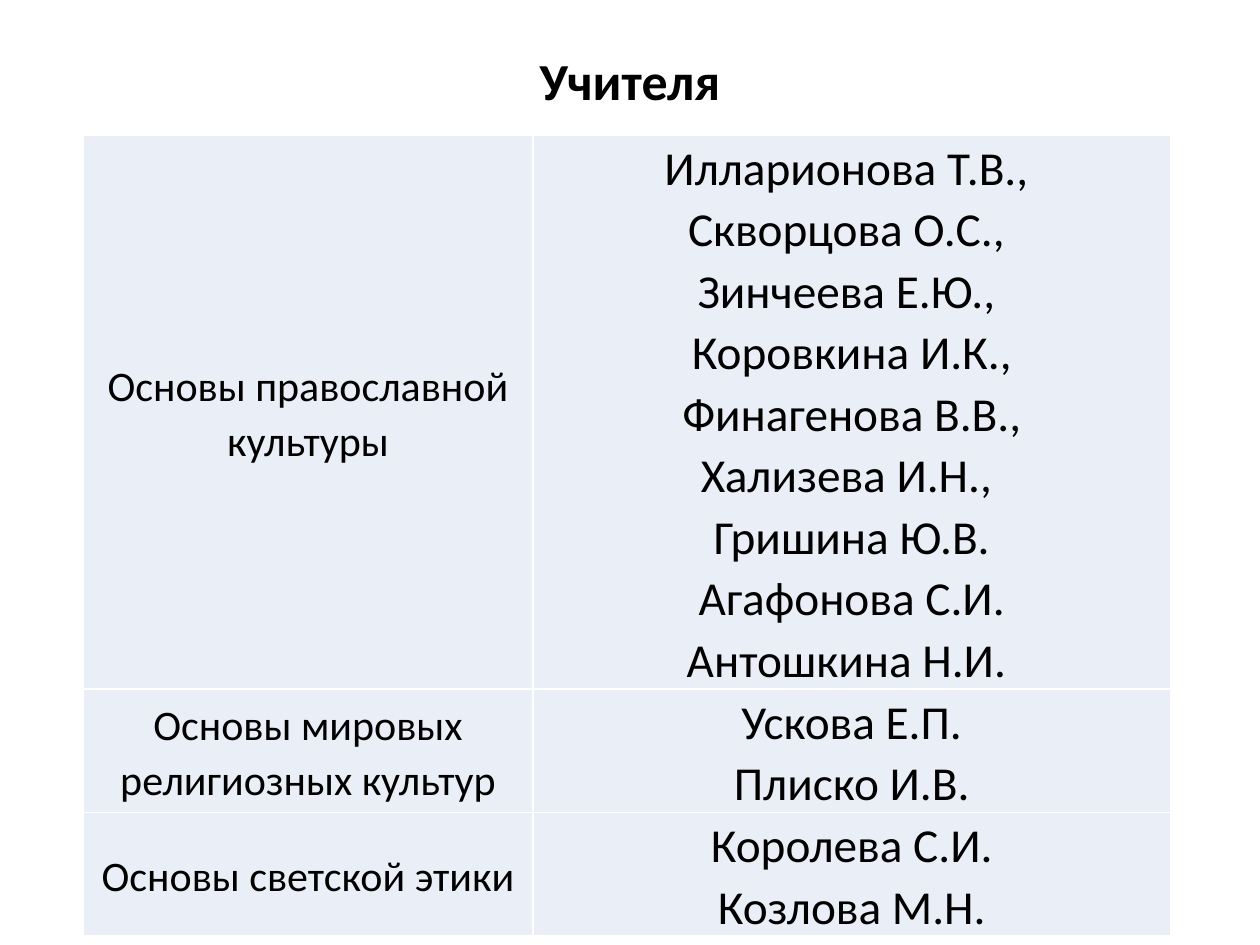
"""Build the slide listing the teachers of each course."""
from dataclasses import dataclass

from lxml.etree import SubElement
from pptx import Presentation
from pptx.dml.color import RGBColor
from pptx.enum.text import MSO_ANCHOR as Anchor, PP_ALIGN as Align
from pptx.oxml.ns import qn
from pptx.util import Inches, Pt


@dataclass(frozen=True)
class Theme:
    """Colours and type sizes of the slide."""
    font: str = "Calibri"
    ink: str = "000000"
    cell: str = "EAEFF7"
    border: str = "FFFFFF"
    border_width: int = Pt(1)
    title_size: float = 29.7
    course_size: float = 24
    teacher_size: float = 27


@dataclass(frozen=True)
class Course:
    """A course, its teachers and the height of its row in inches."""
    name: str
    teachers: tuple[str, ...]
    height: float


THEME = Theme()
COLUMN_WIDTHS = (3.57, 5.06)
COURSES = (
    Course("Основы православной культуры", (
        "Илларионова Т.В., ", "Скворцова О.С., ", "Зинчеева Е.Ю., ",
        "Коровкина И.К.,", " Финагенова В.В., ", "Хализева И.Н., ",
        "Гришина Ю.В.", "Агафонова С.И.", "Антошкина Н.И. "), 4.4),
    Course("Основы мировых религиозных культур",
           ("Ускова Е.П.", "Плиско И.В."), 0.98),
    Course("Основы светской этики",
           ("Королева С.И.", "Козлова М.Н."), 0.98),
)


def write(frame, text: str, size: float, spacing: float, bold: bool = False) -> None:
    """Fill a text frame with centred paragraphs, one per line of text."""
    frame.text = text
    frame.word_wrap = True
    for paragraph in frame.paragraphs:
        paragraph.alignment = Align.CENTER
        paragraph.line_spacing = spacing
        for run in paragraph.runs:
            run.font.name = THEME.font
            run.font.size = Pt(size)
            run.font.bold = bold
            run.font.color.rgb = RGBColor.from_string(THEME.ink)


def add_borders(cell) -> None:
    """Draw the four borders of a table cell."""
    properties = cell._tc.get_or_add_tcPr()
    for position, side in enumerate(("lnL", "lnR", "lnT", "lnB")):
        line = SubElement(properties, qn(f"a:{side}"), w=str(THEME.border_width))
        fill = SubElement(line, qn("a:solidFill"))
        SubElement(fill, qn("a:srgbClr"), val=THEME.border)
        properties.insert(position, line)


def style_cell(cell, text: str, size: float) -> None:
    """Write and format one table cell."""
    write(cell.text_frame, text, size, 1.07)
    cell.vertical_anchor = Anchor.MIDDLE
    cell.margin_left = cell.margin_right = cell.margin_top = Inches(0.01)
    cell.margin_bottom = 0
    cell.fill.solid()
    cell.fill.fore_color.rgb = RGBColor.from_string(THEME.cell)
    add_borders(cell)


def add_title(slide, text: str) -> None:
    """Add the slide heading."""
    frame = slide.shapes.add_textbox(
        Inches(0.69), Inches(0.4), Inches(8.62), Inches(0.52)).text_frame
    frame.vertical_anchor = Anchor.MIDDLE
    write(frame, text, THEME.title_size, 0.9, bold=True)


def add_courses(slide, courses: tuple[Course, ...]) -> None:
    """Add the table of courses and teachers."""
    table = slide.shapes.add_table(
        len(courses), len(COLUMN_WIDTHS), Inches(0.66), Inches(1.07),
        Inches(sum(COLUMN_WIDTHS)),
        Inches(sum(course.height for course in courses))).table
    table.first_row = table.horz_banding = False
    for column, width in zip(table.columns, COLUMN_WIDTHS):
        column.width = Inches(width)
    for row, course in zip(table.rows, courses):
        row.height = Inches(course.height)
        name_cell, teachers_cell = row.cells
        style_cell(name_cell, course.name, THEME.course_size)
        style_cell(teachers_cell, "\n".join(course.teachers), THEME.teacher_size)


def main() -> None:
    """Build and save the presentation."""
    presentation = Presentation()
    presentation.slide_width = Inches(10)
    presentation.slide_height = Inches(7.5)
    slide = presentation.slides.add_slide(presentation.slide_layouts[6])
    add_title(slide, "Учителя")
    add_courses(slide, COURSES)
    presentation.save("out.pptx")


if __name__ == "__main__":
    main()
